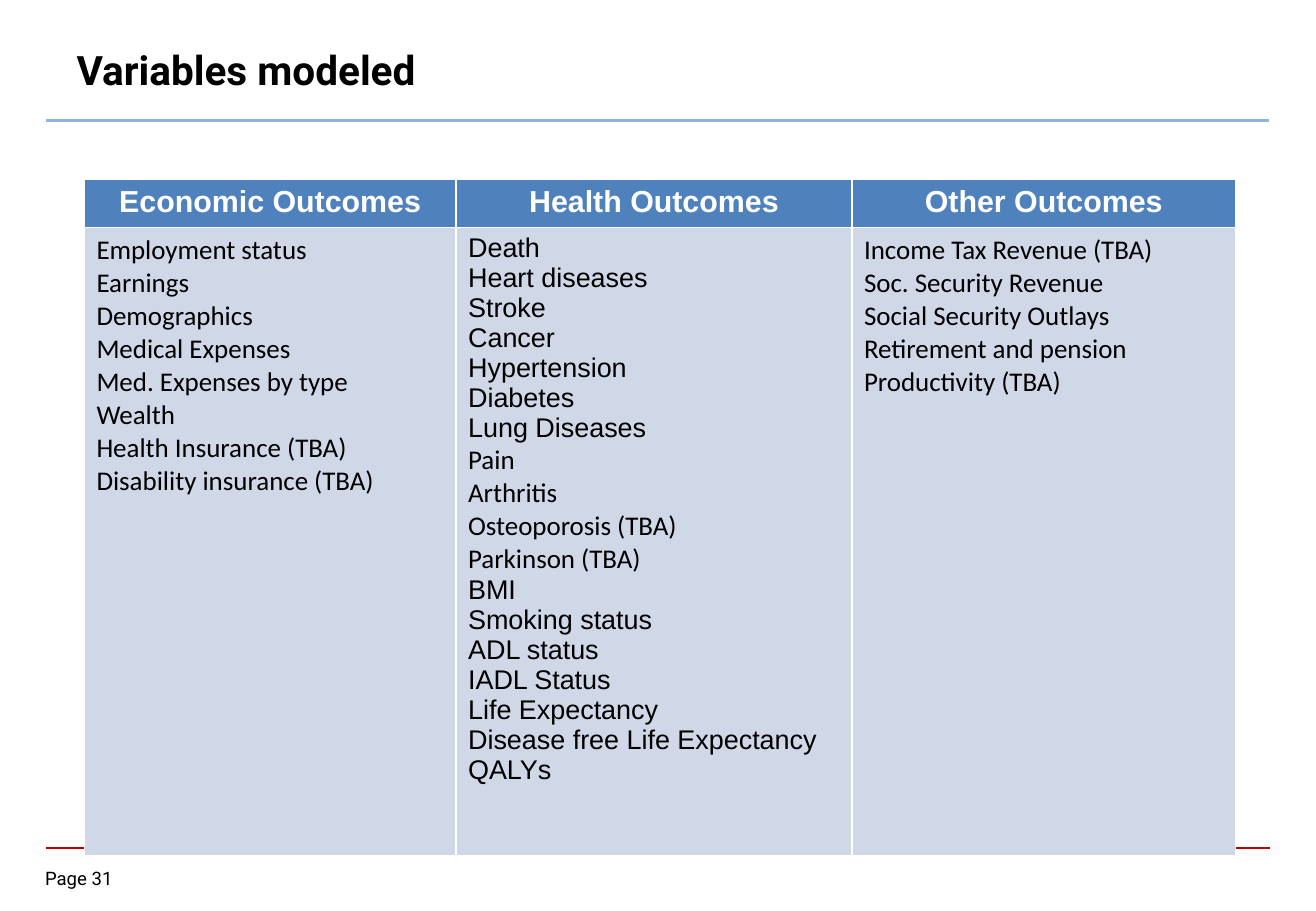
"""Build the slide listing the variables modeled, by outcome group."""
from lxml import etree
from pptx import Presentation
from pptx.dml.color import RGBColor
from pptx.enum.shapes import MSO_CONNECTOR
from pptx.enum.text import MSO_ANCHOR, MSO_AUTO_SIZE, PP_ALIGN
from pptx.oxml.ns import qn
from pptx.util import Pt

STRAIGHT = MSO_CONNECTOR.STRAIGHT
MIDDLE = MSO_ANCHOR.MIDDLE
NO_FIT = MSO_AUTO_SIZE.NONE
LEFT, CENTER = PP_ALIGN.LEFT, PP_ALIGN.CENTER

COLORS = {
    "black": "000000",
    "white": "FFFFFF",
    "red": "C00000",
    "sky": "8EB4E3",
    "header": "4F81BD",
    "body": "D0D8E8",
}

OUTCOMES = [
    ("Economic Outcomes", 220.3, [
        ("Calibri", ["Employment status", "Earnings", "Demographics",
                     "Medical Expenses", "Med. Expenses by type", "Wealth",
                     "Health Insurance (TBA)", "Disability insurance (TBA)"]),
    ]),
    ("Health Outcomes", 234.7, [
        ("Arial", ["Death", "Heart diseases", "Stroke", "Cancer",
                   "Hypertension", "Diabetes", "Lung Diseases"]),
        ("Calibri", ["Pain", "Arthritis", "Osteoporosis (TBA)",
                     "Parkinson (TBA)"]),
        ("Arial", ["BMI", "Smoking status", "ADL status", "IADL Status",
                   "Life Expectancy", "Disease free Life Expectancy",
                   "QALYs"]),
    ]),
    ("Other Outcomes", 227.5, [
        ("Calibri", ["Income Tax Revenue (TBA)", "Soc. Security Revenue",
                     "Social Security Outlays", "Retirement and pension",
                     "Productivity (TBA)"]),
    ]),
]
ROW_HEIGHTS = [28.8, 372.2]


def add_span(para, text, font, size, color, bold=False):
    span = para.add_run()
    span.text = text
    span.font.name = font
    span.font.size = Pt(size)
    span.font.bold = bold
    span.font.color.rgb = RGBColor.from_string(COLORS[color])


def fill_cell(cell, color):
    cell.fill.solid()
    cell.fill.fore_color.rgb = RGBColor.from_string(COLORS[color])


deck = Presentation()
deck.slide_width, deck.slide_height = Pt(780), Pt(540)
page = deck.slides.add_slide(deck.slide_layouts[5])

for right, height, color, weight in [(753, 502.6, "red", 1),
                                     (752, 71.3, "sky", 1.5)]:
    rule = page.shapes.add_connector(
        STRAIGHT, Pt(27.3), Pt(height), Pt(right), Pt(height))
    rule.line.color.rgb = RGBColor.from_string(COLORS[color])
    rule.line.width = Pt(weight)
    etree.SubElement(rule._element.spPr, qn("a:effectLst"))

title = page.shapes.title
title.left, title.top, title.width, title.height = (
    Pt(38.2), Pt(21.6), Pt(516.2), Pt(38.9))
title.text_frame.auto_size = NO_FIT
title.text_frame.vertical_anchor = MIDDLE
title_para = title.text_frame.paragraphs[0]
title_para.alignment = LEFT
add_span(title_para, "Variables modeled", "Roboto", 24, "black", True)

number_box = page.shapes.add_textbox(Pt(26.7), Pt(514.1), Pt(52.6), Pt(15.8))
number_frame = number_box.text_frame
number_frame.word_wrap = True
number_frame.margin_left = number_frame.margin_right = 0
number_frame.margin_top = number_frame.margin_bottom = 0
add_span(number_frame.paragraphs[0], "Page 31", "Roboto", 11, "black")

table = page.shapes.add_table(
    len(ROW_HEIGHTS), len(OUTCOMES), Pt(50), Pt(106),
    Pt(sum(width for _, width, _ in OUTCOMES)), Pt(sum(ROW_HEIGHTS))).table
for row, height in zip(table.rows, ROW_HEIGHTS):
    row.height = Pt(height)

for column, (heading, width, groups) in enumerate(OUTCOMES):
    table.columns[column].width = Pt(width)
    header, body = table.cell(0, column), table.cell(1, column)
    fill_cell(header, "header")
    fill_cell(body, "body")

    heading_para = header.text_frame.paragraphs[0]
    heading_para.alignment = CENTER
    add_span(heading_para, heading, "Arial", 18, "white", True)

    variables = [(font, name) for font, names in groups for name in names]
    for position, (font, name) in enumerate(variables):
        frame = body.text_frame
        para = frame.add_paragraph() if position else frame.paragraphs[0]
        add_span(para, name, font, 16, "black")

deck.save("out.pptx")
